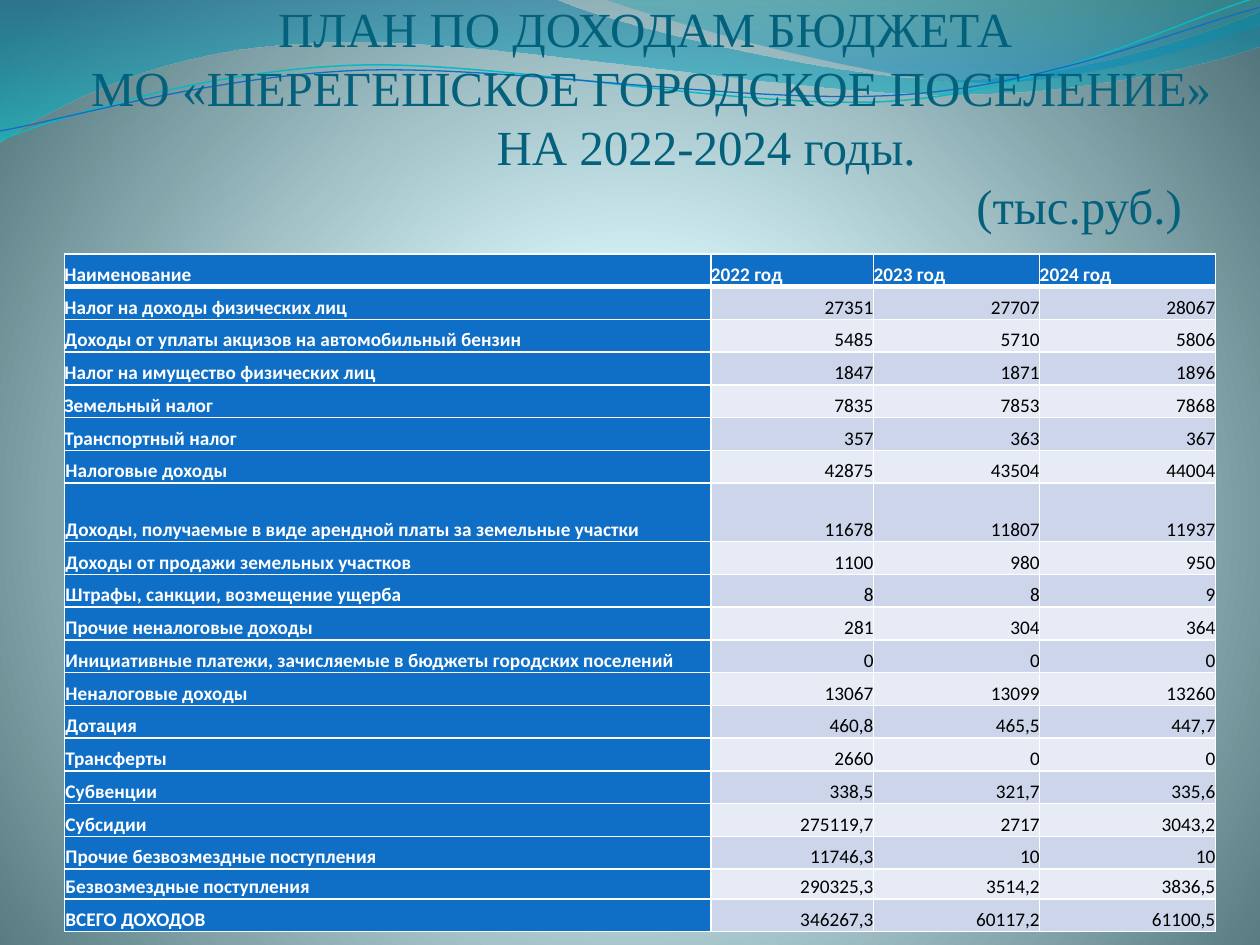
import math
from dataclasses import dataclass

from lxml import etree
from pptx import Presentation
from pptx import util as u
from pptx.dml.color import RGBColor
from pptx.enum import text
from pptx.oxml import ns


@dataclass(frozen=True)
class Theme:
    title_color: str = "04617B"
    accent: str = "0F6FC6"
    cyan: str = "0AB8BF"
    white: str = "FFFFFF"
    black: str = "000000"
    bands: tuple = ("CCD5EA", "E7EBF5")
    background: tuple = ((0, "DEFBFF", 100), (25, "DDFAFF", 100), (100, "52767C", 100))
    wide_wave: tuple = ((0, "0074A1", 45), (100, "00C6CF", 55))
    right_wave: tuple = ((0, "00A1A9", 30), (80, "008BBF", 45))
    title_font: str = "Times New Roman"
    table_font: str = "Calibri"
    title_size: int = 28
    table_size: int = 11


THEME = Theme()

TITLE_LINES = (
    ("ПЛАН ПО ДОХОДАМ БЮДЖЕТА", 0),
    ("МО «ШЕРЕГЕШСКОЕ ГОРОДСКОЕ ПОСЕЛЕНИЕ»", 0.24),
    ("НА 2022-2024 годы.", 2.46),
    ("(тыс.руб.)", 17.5),
)

INCOME = (
    ("Наименование", "2022 год", "2023 год", "2024 год"),
    ("Налог на доходы физических лиц", "27351", "27707", "28067"),
    ("Доходы от уплаты акцизов на автомобильный бензин", "5485", "5710", "5806"),
    ("Налог на имущество физических лиц", "1847", "1871", "1896"),
    ("Земельный налог", "7835", "7853", "7868"),
    ("Транспортный налог", "357", "363", "367"),
    ("Налоговые доходы", "42875", "43504", "44004"),
    ("Доходы, получаемые в виде арендной платы за земельные участки", "11678", "11807", "11937"),
    ("Доходы от продажи земельных участков", "1100", "980", "950"),
    ("Штрафы, санкции, возмещение ущерба", "8", "8", "9"),
    ("Прочие неналоговые доходы", "281", "304", "364"),
    ("Инициативные платежи, зачисляемые в бюджеты городских поселений", "0", "0", "0"),
    ("Неналоговые доходы", "13067", "13099", "13260"),
    ("Дотация", "460,8", "465,5", "447,7"),
    ("Трансферты", "2660", "0", "0"),
    ("Субвенции", "338,5", "321,7", "335,6"),
    ("Субсидии", "275119,7", "2717", "3043,2"),
    ("Прочие безвозмездные поступления", "11746,3", "10", "10"),
    ("Безвозмездные поступления", "290325,3", "3514,2", "3836,5"),
    ("ВСЕГО ДОХОДОВ", "346267,3", "60117,2", "61100,5"),
)
COLUMN_WIDTHS = (13.03, 3.28, 3.35, 3.54)
ROW_HEIGHT = 0.66
SPECIAL_HEIGHTS = {7: 1.18, 18: 0.6}
FIRST_INDENTED_ROW = 6

LINE_ROTATION = -2.7
LINE_PIVOT = (12.7, 1.47)

WIDE_WAVE = (
    ((0, 0),), ((11.18, -0.03),),
    ((12.09, 0.43), (16.87, 1.6), (19.25, 1.6)),
    ((21.67, 1.6), (24.33, 0.66), (25.4, 0.23)),
    ((25.43, 0.91),),
    ((24.97, 1.12), (22.1, 1.93), (18.95, 1.9)),
    ((15.8, 1.9), (9.7, 0.71), (6.53, 0.86)),
    ((3.28, 0.91), (1.17, 2.11), (-0.03, 2.87)),
    ((0, 0),),
)
RIGHT_WAVE = (
    ((12.17, -0.03),),
    ((12.93, 0.28), (17.32, 1.57), (19.53, 1.65)),
    ((21.74, 1.75), (24.41, 0.81), (25.4, 0.53)),
    ((25.4, 0),),
    ((12.17, -0.03),),
)
CYAN_LINE = (
    ((0, 2.82),),
    ((1.22, 2.36), (4.01, 1.45), (7.04, 1.32)),
    ((10.03, 1.19), (15.06, 2.26), (18.11, 2.03)),
    ((21.16, 1.8), (23.83, 0.38), (25.35, -0.05)),
)
BLUE_LINE = (
    ((0, 2.64),),
    ((1.19, 2.44), (4.17, 1.55), (7.19, 1.42)),
    ((10.24, 1.3), (15.16, 2.13), (18.21, 1.91)),
    ((21.23, 1.7), (23.9, 0.53), (25.4, 0.15)),
)


def add_child(parent, tag, **attributes):
    return etree.SubElement(parent, ns.qn(tag), {key: str(value) for key, value in attributes.items()})


def set_gradient(fill, owner, stops, circular=False):
    fill.gradient()
    gradient = next(owner.iter(ns.qn("a:gradFill")))
    for child in list(gradient):
        gradient.remove(child)
    stop_list = add_child(gradient, "a:gsLst")
    for position, color, opacity in stops:
        stop = add_child(stop_list, "a:gs", pos=position * 1000)
        color_element = add_child(stop, "a:srgbClr", val=color)
        if opacity < 100:
            add_child(color_element, "a:alpha", val=opacity * 1000)
    if circular:
        shade = add_child(gradient, "a:path", path="circle")
        add_child(shade, "a:fillToRect", l=10000, t=110000, r=10000, b=100000)
    else:
        add_child(gradient, "a:lin", ang=5400000, scaled=0)


def turn_back(point):
    angle = math.radians(-LINE_ROTATION)
    x, y = (value - center for value, center in zip(point, LINE_PIVOT))
    return (LINE_PIVOT[0] + x * math.cos(angle) - y * math.sin(angle),
            LINE_PIVOT[1] + x * math.sin(angle) + y * math.cos(angle))


def add_outline(slide, segments, closed):
    lengths = [[(u.Cm(x), u.Cm(y)) for x, y in segment] for segment in segments]
    builder = slide.shapes.build_freeform(*lengths[0][0])
    builder.add_line_segments([segment[-1] for segment in lengths[1:]], close=closed)
    shape = builder.convert_to_shape()
    shape.shadow.inherit = False
    straight_parts = list(shape.element.iter(ns.qn("a:lnTo")))
    for part, segment in zip(straight_parts, lengths[1:]):
        if len(segment) == 3:
            curve = etree.Element(ns.qn("a:cubicBezTo"))
            for x, y in segment:
                add_child(curve, "a:pt", x=x - shape.left, y=y - shape.top)
            part.getparent().replace(part, curve)
    return shape


def add_wave(slide, segments, stops):
    shape = add_outline(slide, segments, closed=True)
    set_gradient(shape.fill, shape.element, stops)
    shape.line.fill.background()


def add_wave_line(slide, segments, color, width):
    level_segments = [[turn_back(point) for point in segment] for segment in segments]
    shape = add_outline(slide, level_segments, closed=False)
    shape.rotation = LINE_ROTATION
    shape.fill.background()
    shape.line.color.rgb = RGBColor.from_string(color)
    shape.line.width = u.Pt(width)


def write_text(paragraph, content, *, font, size, color, bold=False, align=text.PP_ALIGN.LEFT):
    paragraph.alignment = align
    run = paragraph.add_run()
    run.text = content
    run.font.name = font
    run.font.size = u.Pt(size)
    run.font.bold = bold
    run.font.color.rgb = RGBColor.from_string(color)


def add_title(slide):
    frame = slide.shapes.add_textbox(u.Cm(1.5), u.Cm(1.32), u.Cm(23.01), u.Cm(3.4)).text_frame
    frame.word_wrap = True
    frame.vertical_anchor = text.MSO_ANCHOR.BOTTOM
    frame.margin_left = frame.margin_top = frame.margin_right = frame.margin_bottom = 0
    for index, (line, indent) in enumerate(TITLE_LINES):
        paragraph = frame.add_paragraph() if index else frame.paragraphs[0]
        write_text(paragraph, line, font=THEME.title_font, size=THEME.title_size,
                   color=THEME.title_color, align=text.PP_ALIGN.CENTER)
        paragraph._p.get_or_add_pPr().set("marL", str(u.Cm(indent)))


def set_borders(cell, row):
    widths = {"L": 1, "R": 1, "T": 3 if row == 1 else 1, "B": 3 if row == 0 else 1}
    properties = cell._tc.get_or_add_tcPr()
    for side, width in widths.items():
        border = add_child(properties, f"a:ln{side}", w=u.Pt(width))
        add_child(add_child(border, "a:solidFill"), "a:srgbClr", val=THEME.white)


def format_cell(cell, content, row, column):
    heading = row == 0 or column == 0
    inset = u.Cm(0.02) if column == 0 and row >= FIRST_INDENTED_ROW else 0
    cell.margin_left = cell.margin_right = cell.margin_top = inset
    cell.margin_bottom = 0
    cell.vertical_anchor = text.MSO_ANCHOR.BOTTOM
    set_borders(cell, row)
    cell.fill.solid()
    cell.fill.fore_color.rgb = RGBColor.from_string(THEME.accent if heading else THEME.bands[(row - 1) % 2])
    write_text(cell.text_frame.paragraphs[0], content, font=THEME.table_font, size=THEME.table_size,
               color=THEME.white if heading else THEME.black, bold=heading,
               align=text.PP_ALIGN.LEFT if heading else text.PP_ALIGN.RIGHT)


def add_income_table(slide):
    heights = [SPECIAL_HEIGHTS.get(row, ROW_HEIGHT) for row in range(len(INCOME))]
    table = slide.shapes.add_table(len(INCOME), len(COLUMN_WIDTHS), u.Cm(1.3), u.Cm(5.12),
                                   u.Cm(sum(COLUMN_WIDTHS)), u.Cm(sum(heights))).table
    for column, width in zip(table.columns, COLUMN_WIDTHS):
        column.width = u.Cm(width)
    for row, values in enumerate(INCOME):
        table.rows[row].height = u.Cm(heights[row])
        for column, content in enumerate(values):
            format_cell(table.cell(row, column), content, row, column)


def main():
    presentation = Presentation()
    presentation.slide_width, presentation.slide_height = u.Cm(25.4), u.Cm(19.05)
    slide = presentation.slides.add_slide(presentation.slide_layouts[6])
    set_gradient(slide.background.fill, slide.element, THEME.background, circular=True)
    add_wave(slide, WIDE_WAVE, THEME.wide_wave)
    add_wave(slide, RIGHT_WAVE, THEME.right_wave)
    add_wave_line(slide, CYAN_LINE, THEME.cyan, 0.85)
    add_wave_line(slide, BLUE_LINE, THEME.accent, 0.75)
    add_title(slide)
    add_income_table(slide)
    presentation.save("out.pptx")


if __name__ == "__main__":
    main()
